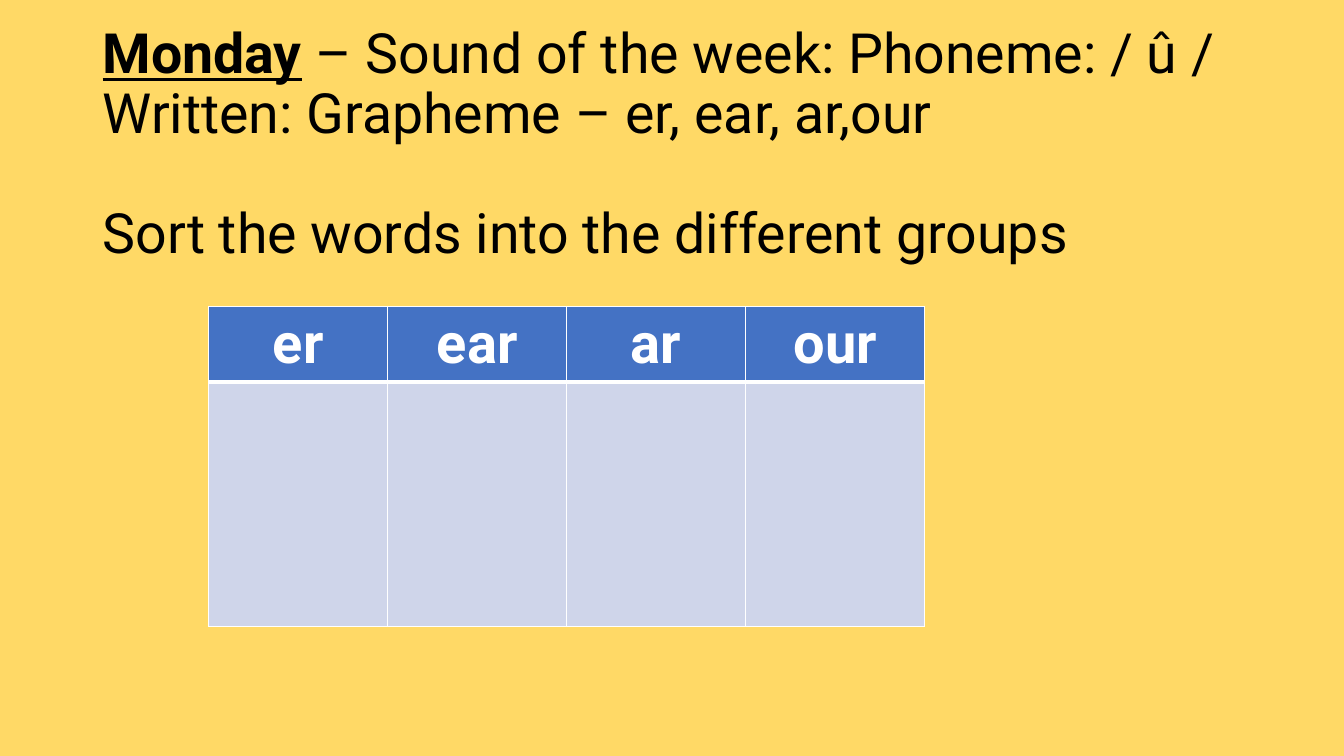
from lxml import etree
from pptx import Presentation
from pptx.dml.color import RGBColor
from pptx.enum.text import MSO_ANCHOR, MSO_AUTO_SIZE, PP_ALIGN
from pptx.oxml.ns import qn
from pptx.util import Cm, Pt

LINES = [
    [("Monday", True), (" – Sound of the week: Phoneme: / û /", False)],
    [("Written: Grapheme – er, ear, ar,our", False)],
    [("Sort the words into the different groups", False)],
]
GAPS = [0, 0, 43]
HEADS = ["er", "ear", "ar", "our"]
ROWS = [1.9, 6.17]
COL = 4.51

GOLD = RGBColor(0xFF, 0xD9, 0x66)
BLACK = RGBColor(0, 0, 0)
WHITE = RGBColor(0xFF, 0xFF, 0xFF)
BLUE = RGBColor(0x44, 0x72, 0xC4)
PALE = RGBColor(0xCF, 0xD5, 0xEA)
FONT = "Roboto"
LEFT, CENTER = PP_ALIGN.LEFT, PP_ALIGN.CENTER
MIDDLE, NO_FIT = MSO_ANCHOR.MIDDLE, MSO_AUTO_SIZE.NONE


def style(font, color, **values):
    font.color.rgb = color
    for name, value in values.items():
        setattr(font, name, value)


def border(cell, widths):
    props = cell._tc.get_or_add_tcPr()
    for side, width in widths.items():
        line = etree.SubElement(props, qn("a:ln" + side), w=str(Pt(width)))
        fill = etree.SubElement(line, qn("a:solidFill"))
        etree.SubElement(fill, qn("a:srgbClr"), val=str(WHITE))


def add_title(slide):
    title = slide.shapes.title
    title.left, title.top = Cm(2.33), Cm(1.83)
    title.width, title.height = Cm(29.21), Cm(3.68)
    frame = title.text_frame
    frame.word_wrap = True
    frame.auto_size = NO_FIT
    frame.vertical_anchor = MIDDLE
    for i, (line, gap) in enumerate(zip(LINES, GAPS)):
        para = frame.add_paragraph() if i else frame.paragraphs[0]
        para.alignment = LEFT
        para.line_spacing = 0.9
        para.space_before = Pt(gap)
        for text, strong in line:
            run = para.add_run()
            run.text = text
            style(run.font, BLACK, name=FONT, size=Pt(39.6),
                  bold=strong, underline=strong)


def add_groups(slide):
    count = len(HEADS)
    table = slide.shapes.add_table(
        len(ROWS), count, Cm(5.26), Cm(7.72),
        Cm(COL * count), Cm(sum(ROWS))).table
    for row, height in zip(table.rows, ROWS):
        row.height = Cm(height)
    for c, head in enumerate(HEADS):
        table.columns[c].width = Cm(COL)
        top, body = table.cell(0, c), table.cell(1, c)
        border(top, {"L": 1, "R": 1, "T": 1, "B": 3})
        border(body, {"L": 1, "R": 1, "T": 3, "B": 1})
        for cell, color in ((top, BLUE), (body, PALE)):
            cell.fill.solid()
            cell.fill.fore_color.rgb = color
        para = top.text_frame.paragraphs[0]
        para.alignment = CENTER
        run = para.add_run()
        run.text = head
        style(run.font, WHITE, name=FONT, size=Pt(40), bold=True)


def main():
    deck = Presentation()
    deck.slide_width, deck.slide_height = Cm(33.87), Cm(19.05)
    slide = deck.slides.add_slide(deck.slide_layouts[5])
    fill = slide.background.fill
    fill.solid()
    fill.fore_color.rgb = GOLD
    add_title(slide)
    add_groups(slide)
    deck.save("out.pptx")


if __name__ == "__main__":
    main()
